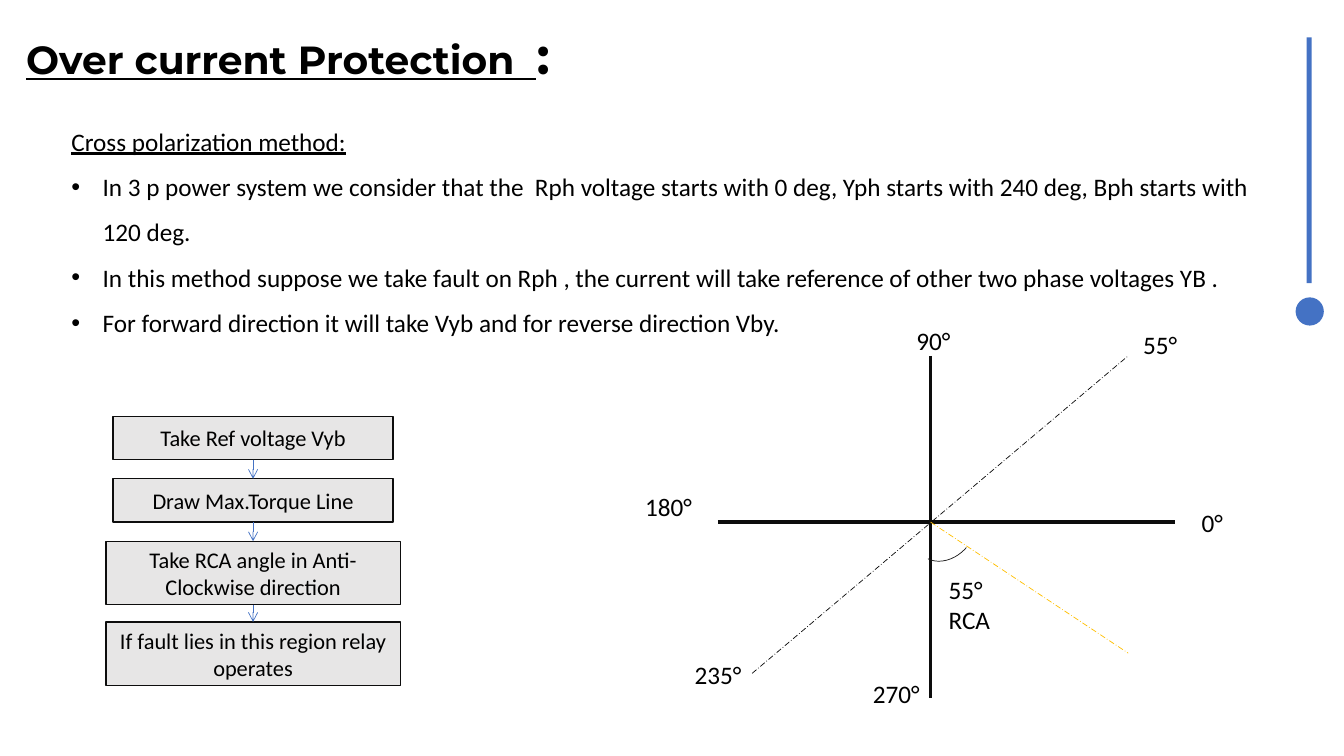
from dataclasses import dataclass
from itertools import pairwise

from lxml import etree
from pptx import Presentation
from pptx import util as u
from pptx.dml import color as colors
from pptx.enum import dml, shapes, text
from pptx.oxml import ns


@dataclass(frozen=True)
class Theme:
    black: str = "000000"
    axis: str = "0D0D0D"
    arc: str = "181717"
    accent: str = "4472C4"
    step_fill: str = "E7E6E6"
    torque: str = "FFC000"
    title_font: str = "Montserrat"
    body_font: str = "Calibri"
    title_size: int = 28
    colon_size: int = 36
    body_size: int = 18
    step_size: int = 16
    thin: float = 0.5
    border: float = 1
    thick: float = 2.5


def rgb(value):
    return colors.RGBColor.from_string(value)


def write(para, words, *, font, size, color, bold=False, underline=False,
          align=text.PP_ALIGN.LEFT, spacing=1.0):
    para.alignment = align
    para.line_spacing = spacing
    span = para.add_run()
    span.text = words
    span.font.name = font
    span.font.size = u.Pt(size)
    span.font.bold = bold
    span.font.underline = underline
    span.font.color.rgb = rgb(color)


class SlideBuilder:
    """Draws styled elements on one slide."""

    def __init__(self, slide, theme):
        self.slide = slide
        self.theme = theme
        self.body = dict(font=theme.body_font, size=theme.body_size, color=theme.black)

    def title(self, words, mark, left, top, width, height):
        box = self.slide.shapes.title
        box.left, box.top, box.width, box.height = map(u.Inches, (left, top, width, height))
        frame = box.text_frame
        frame.auto_size = text.MSO_AUTO_SIZE.NONE
        frame.vertical_anchor = text.MSO_ANCHOR.TOP
        style = dict(font=self.theme.title_font, color=self.theme.black, bold=True)
        para = frame.paragraphs[0]
        write(para, words, size=self.theme.title_size, underline=True, **style)
        write(para, mark, size=self.theme.colon_size, **style)

    def text_box(self, lines, left, top, width, height, **style):
        box = self.slide.shapes.add_textbox(*map(u.Inches, (left, top, width, height)))
        frame = box.text_frame
        frame.word_wrap = True
        for index, line in enumerate(lines):
            para = frame.add_paragraph() if index else frame.paragraphs[0]
            write(para, line, **{**self.body, **style})
        return frame

    def bullets(self, heading, points, left, top, width, height):
        frame = self.text_box([heading, *points], left, top, width, height, spacing=1.5)
        first, *rest = frame.paragraphs
        first.runs[0].font.underline = True
        indent = u.Inches(0.31)
        for para in rest:
            props = para._p.get_or_add_pPr()
            props.set("marL", str(indent))
            props.set("indent", str(-indent))
            etree.SubElement(props, ns.qn("a:buFont"), typeface="Arial")
            etree.SubElement(props, ns.qn("a:buChar"), char="•")

    def shape(self, kind, left, top, width, height, fill=None, line=None, weight=1):
        shape = self.slide.shapes.add_shape(kind, *map(u.Inches, (left, top, width, height)))
        shape.shadow.inherit = False
        if fill:
            shape.fill.solid()
            shape.fill.fore_color.rgb = rgb(fill)
        else:
            shape.fill.background()
        if line:
            shape.line.color.rgb = rgb(line)
            shape.line.width = u.Pt(weight)
        else:
            shape.line.fill.background()
        return shape

    def step(self, words, center, top, width, height):
        box = self.shape(shapes.MSO_SHAPE.RECTANGLE, center - width / 2, top, width, height,
                         self.theme.step_fill, self.theme.axis, self.theme.border)
        frame = box.text_frame
        frame.word_wrap = True
        frame.vertical_anchor = text.MSO_ANCHOR.MIDDLE
        write(frame.paragraphs[0], words, font=self.theme.body_font, size=self.theme.step_size,
              color=self.theme.black, align=text.PP_ALIGN.CENTER)

    def line(self, start, end, color, weight, dash=None, arrow=False):
        line = self.slide.shapes.add_connector(
            shapes.MSO_CONNECTOR.STRAIGHT, *map(u.Inches, (*start, *end)))
        line.line.color.rgb = rgb(color)
        line.line.width = u.Pt(weight)
        if dash:
            line.line.dash_style = dash
        if arrow:
            etree.SubElement(line.line._get_or_add_ln(), ns.qn("a:tailEnd"), type="arrow")
        etree.SubElement(line._element.spPr, ns.qn("a:effectLst"))

    def arc(self, left, top, width, height, rotation, angles):
        arc = self.shape(shapes.MSO_SHAPE.ARC, left, top, width, height,
                         line=self.theme.arc, weight=self.theme.thin)
        arc.rotation = rotation
        for index, angle in enumerate(angles):
            arc.adjustments[index] = angle


def draw_flow(builder):
    theme = builder.theme
    center = 2.51
    steps = [
        ("Take Ref voltage Vyb", 4.13, 2.78, 0.43),
        ("Draw Max.Torque Line", 4.75, 2.78, 0.43),
        ("Take RCA angle in Anti-Clockwise direction", 5.37, 2.92, 0.63),
        ("If fault lies in this region relay operates", 6.17, 2.92, 0.63),
    ]
    for words, top, width, height in steps:
        builder.step(words, center, top, width, height)
    for (_, top, _, height), (_, next_top, _, _) in pairwise(steps):
        builder.line((center, top + height), (center, next_top),
                     theme.accent, theme.thin, arrow=True)


def draw_phasors(builder):
    theme = builder.theme
    origin = (9.23, 5.18)
    dash = dml.MSO_LINE.LONG_DASH_DOT
    builder.line((origin[0], 3.53), (origin[0], 6.92), theme.axis, theme.thick)
    builder.line((7.12, origin[1]), (11.65, origin[1]), theme.axis, theme.thick)
    builder.line((7.46, 6.68), (11.19, 3.53), theme.axis, theme.thin, dash)
    builder.line(origin, (11.19, 6.48), theme.torque, theme.thin, dash)
    builder.arc(9.05, 5.01, 0.66, 0.52, 134.2, (158.62, 209.24))
    labels = [
        (["0°"], 11.82, 4.98),
        (["90°"], 8.99, 3.18),
        (["180°"], 6.3, 4.82),
        (["270°"], 8.56, 6.68),
        (["235°"], 6.79, 6.49),
        (["55°"], 11.24, 3.22),
        (["55°", "RCA"], 9.31, 5.65),
    ]
    for lines, left, top in labels:
        builder.text_box(lines, left, top, 0.67, 0.71)


def main():
    deck = Presentation()
    deck.slide_width, deck.slide_height = u.Inches(13.33), u.Inches(7.5)
    theme = Theme()
    builder = SlideBuilder(deck.slides.add_slide(deck.slide_layouts[5]), theme)
    builder.shape(shapes.MSO_SHAPE.RECTANGLE, 12.96, 0.37, 0.05, 2.44, theme.accent)
    builder.shape(shapes.MSO_SHAPE.OVAL, 12.85, 2.95, 0.28, 0.28, theme.accent)
    builder.title("Over current Protection  ", ":", 0.16, 0.19, 12, 0.71)
    builder.bullets("Cross polarization method:", [
        "In 3 p power system we consider that the  Rph voltage starts with 0 deg, "
        "Yph starts with 240 deg, Bph starts with 120 deg.",
        "In this method suppose we take fault on Rph , the current will take reference "
        "of other two phase voltages YB .",
        "For forward direction it will take Vyb and for reverse direction Vby.",
    ], 0.61, 1.05, 12.04, 3.13)
    draw_flow(builder)
    draw_phasors(builder)
    deck.save("out.pptx")


if __name__ == "__main__":
    main()
